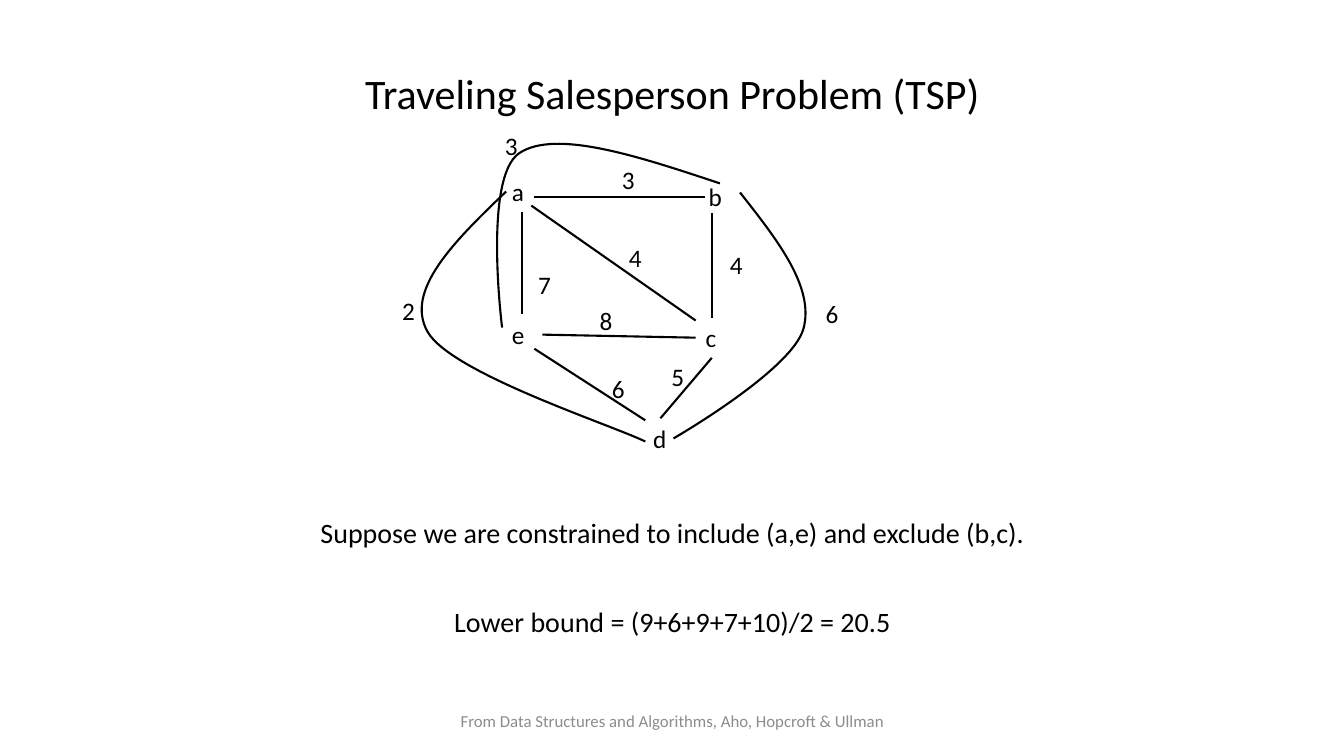
"""Builds a slide with a weighted graph for the traveling salesperson problem."""
from lxml import etree
from pptx import Presentation
from pptx import util as u
from pptx.dml.color import RGBColor
from pptx.enum import shapes, text
from pptx.oxml import ns

PX = 9144
BLACK = RGBColor(0x00, 0x00, 0x00)
GRAY = RGBColor(0x8C, 0x8C, 0x8C)
TOP, BOTTOM, RIGHT, LEFT = 0, 2, 3, 1


def write(frame, lines, size, color=BLACK, align=text.PP_ALIGN.CENTER, anchor=text.MSO_ANCHOR.TOP):
    frame.word_wrap = True
    frame.auto_size = text.MSO_AUTO_SIZE.NONE
    frame.vertical_anchor = anchor
    for index, line in enumerate(lines):
        paragraph = frame.paragraphs[0] if index == 0 else frame.add_paragraph()
        paragraph.alignment = align
        run = paragraph.add_run()
        run.text = line
        run.font.name = "Calibri"
        run.font.size = u.Pt(size)
        run.font.color.rgb = color


def add_box(left, top, width, height):
    return slide.shapes.add_textbox(left * PX, top * PX, width * PX, height * PX)


presentation = Presentation()
presentation.slide_width = 1333 * PX
presentation.slide_height = 750 * PX
slide = presentation.slides.add_slide(presentation.slide_layouts[5])

title = slide.shapes.title
title.left, title.top, title.width, title.height = 167 * PX, 62 * PX, 1000 * PX, 61 * PX
write(title.text_frame, ["Traveling Salesperson Problem (TSP)"], 30)

statement = add_box(167, 510, 1000, 65).text_frame
write(statement, ["Suppose we are constrained to include (a,e) and exclude (b,c).",
                  "Lower bound = (9+6+9+7+10)/2 = 20.5"], 20)
for paragraph, space in zip(statement.paragraphs, (0, 42)):
    paragraph.line_spacing = 0.9
    paragraph.space_before = u.Pt(space)

nodes = {}
for name, left, top, width in (("a", 498, 170, 40), ("b", 693, 175, 34), ("c", 690, 315, 32),
                               ("d", 638, 415, 34), ("e", 498, 312, 40)):
    nodes[name] = add_box(left, top, width, 40)
    write(nodes[name].text_frame, [name], 18, align=text.PP_ALIGN.LEFT)

weights = (("4", 614, 236, 33), ("3", 607, 158, 33), ("8", 585, 298, 33), ("5", 656, 354, 33),
           ("6", 597, 365, 33), ("6", 809, 291, 33), ("2", 389, 288, 33), ("3", 491, 124, 33),
           ("4", 714, 242, 24), ("7", 524, 262, 33))
for weight, left, top, width in weights:
    write(add_box(left, top, width, 40).text_frame, [weight], 18, align=text.PP_ALIGN.LEFT)

edges = (
    ((518, 211), (518, 314), ("a", BOTTOM), ("e", TOP)),
    ((538, 331), (690, 333), ("e", RIGHT), ("c", LEFT)),
    ((527, 204), (690, 318), None, None),
    ((530, 195), (699, 195), None, None),
    ((706, 211), (706, 315), None, ("c", TOP)),
    ((530, 346), (640, 417), None, None),
    ((654, 415), (706, 355), ("d", TOP), ("c", BOTTOM)),
)
for (x1, y1), (x2, y2), begin, end in edges:
    edge = slide.shapes.add_connector(shapes.MSO_CONNECTOR.STRAIGHT,
                                      x1 * PX, y1 * PX, x2 * PX, y2 * PX)
    if begin:
        edge.begin_connect(nodes[begin[0]], begin[1])
    if end:
        edge.end_connect(nodes[end[0]], end[1])
    edge.line.color.rgb = BLACK
    edge.line.width = u.Pt(1.5)
    etree.SubElement(edge._element.spPr, ns.qn("a:effectLst"))

curves = (
    ((734, 191), (771, 238), (808, 285), (797, 326), (786, 367), (668, 435), (668, 435)),
    ((714, 182), (633, 155), (551, 128), (515, 152), (479, 176), (498, 325), (498, 325)),
    ((502, 190), (451, 239), (401, 288), (424, 329), (447, 370), (605, 421), (640, 438)),
)
for start, *controls in curves:
    builder = slide.shapes.build_freeform(*start, scale=PX)
    builder.add_line_segments(controls, close=False)
    curve = builder.convert_to_shape()
    segments = curve._element.xpath(".//a:lnTo")
    for first in range(0, len(segments), 3):
        bezier = etree.Element(ns.qn("a:cubicBezTo"))
        segments[first].addprevious(bezier)
        for segment in segments[first:first + 3]:
            bezier.append(segment[0])
            segment.getparent().remove(segment)
    curve.fill.background()
    curve.line.color.rgb = BLACK
    curve.line.width = u.Pt(1.5)
    curve.shadow.inherit = False

footer = add_box(442, 695, 450, 40)
write(footer.text_frame, ["From Data Structures and Algorithms, Aho, Hopcroft & Ullman"], 12,
      GRAY, anchor=text.MSO_ANCHOR.MIDDLE)

presentation.save("out.pptx")
